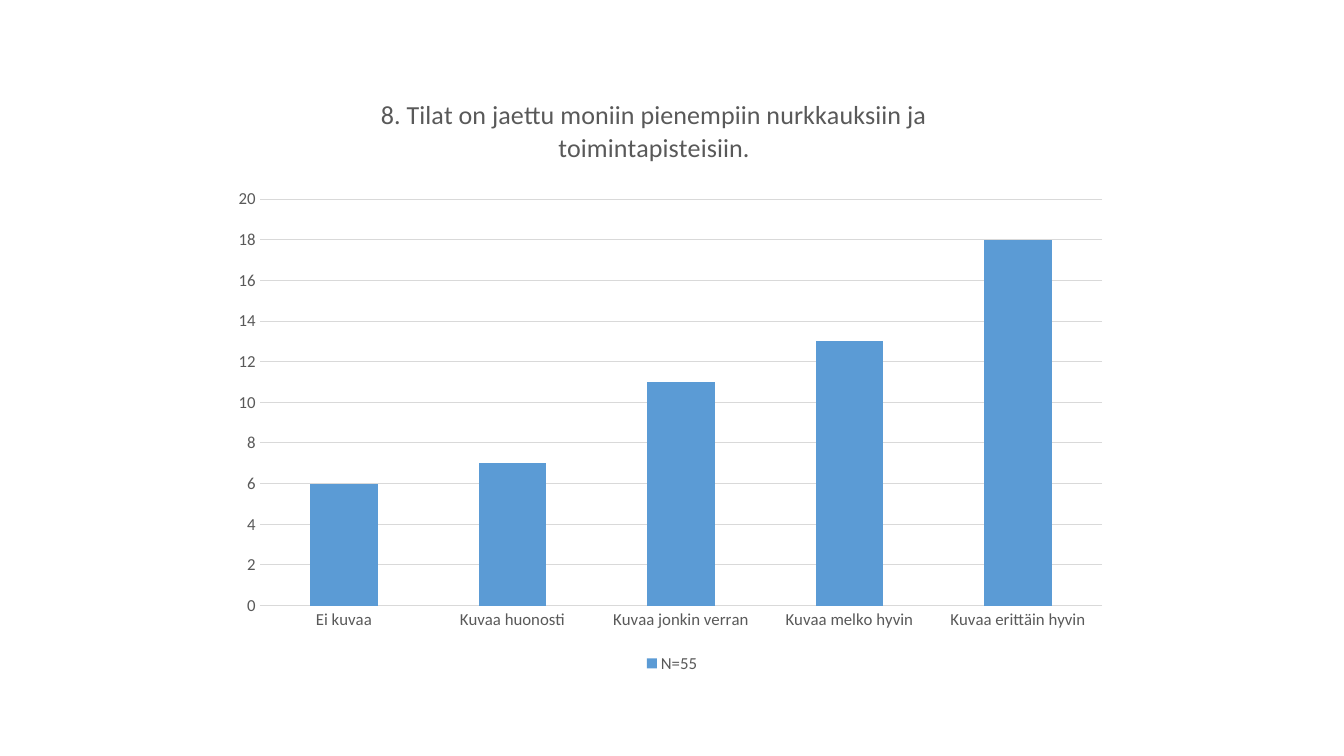
from dataclasses import dataclass

from lxml import etree
from pptx import Presentation
from pptx.chart.data import CategoryChartData
from pptx.dml.color import RGBColor
from pptx.enum.chart import XL_CHART_TYPE, XL_LEGEND_POSITION, XL_TICK_MARK
from pptx.oxml.ns import qn
from pptx.util import Inches, Pt

COLUMN_STACKED = XL_CHART_TYPE.COLUMN_STACKED
LEGEND_BOTTOM = XL_LEGEND_POSITION.BOTTOM
NO_TICK = XL_TICK_MARK.NONE


@dataclass(frozen=True)
class Theme:
    font: str = "Calibri"
    text: RGBColor = RGBColor(0x59, 0x59, 0x59)
    grid: RGBColor = RGBColor(0xD9, 0xD9, 0xD9)
    column: RGBColor = RGBColor(0x5B, 0x9B, 0xD5)
    title_size: Pt = Pt(18.6)
    label_size: Pt = Pt(12)
    line_width: Pt = Pt(0.75)


theme = Theme()


def style_font(font, size):
    font.name = theme.font
    font.size = size
    font.bold = False
    font.color.rgb = theme.text


def set_layout(element, position, **settings):
    """Place a chart part by fractions of the chart area."""
    for old_layout in element.findall(qn("c:layout")):
        element.remove(old_layout)
    layout = etree.Element(qn("c:layout"))
    manual = etree.SubElement(layout, qn("c:manualLayout"))
    for name, value in settings.items():
        etree.SubElement(manual, qn(f"c:{name}")).set("val", str(value))
    element.insert(position, layout)


# Slide
presentation = Presentation()
presentation.slide_width = Inches(13.33)
presentation.slide_height = Inches(7.5)
slide = presentation.slides.add_slide(presentation.slide_layouts[6])

# Survey answers
answers = CategoryChartData()
answers.categories = [
    "Ei kuvaa",
    "Kuvaa huonosti",
    "Kuvaa jonkin verran",
    "Kuvaa melko hyvin",
    "Kuvaa erittäin hyvin",
]
answers.add_series("N=55", (6, 7, 11, 13, 18))

# Column chart
chart = slide.shapes.add_chart(
    COLUMN_STACKED, Inches(2.22), Inches(0.79), Inches(8.89), Inches(5.93), answers
).chart
style_font(chart.font, theme.label_size)
plot = chart.plots[0]
plot.gap_width = 150
plot.overlap = 100
plot.vary_by_categories = False
column_fill = plot.series[0].format.fill
column_fill.solid()
column_fill.fore_color.rgb = theme.column
set_layout(
    chart.element.find(".//" + qn("c:plotArea")), 0,
    layoutTarget="inner", xMode="edge", yMode="edge", x=0.04, y=0.2, w=0.94, h=0.68,
)

# Title
chart.has_title = True
title = chart.chart_title
title.include_in_layout = False
title.text_frame.text = "8. Tilat on jaettu moniin pienempiin nurkkauksiin ja toimintapisteisiin."
style_font(title.text_frame.paragraphs[0].font, theme.title_size)
set_layout(title.element if hasattr(title, "element") else chart.element.find(".//" + qn("c:title")), 1,
           xMode="edge", yMode="edge", x=0.17, y=0.02)

# Axes
for axis in (chart.category_axis, chart.value_axis):
    axis.major_tick_mark = NO_TICK
    axis.minor_tick_mark = NO_TICK
    style_font(axis.tick_labels.font, theme.label_size)
chart.value_axis.minimum_scale = 0
chart.value_axis.maximum_scale = 20
chart.value_axis.major_unit = 2
chart.value_axis.format.line.fill.background()
for line in (chart.category_axis.format.line, chart.value_axis.major_gridlines.format.line):
    line.color.rgb = theme.grid
    line.width = theme.line_width

# Legend
chart.has_legend = True
chart.legend.position = LEGEND_BOTTOM
chart.legend.include_in_layout = False
style_font(chart.legend.font, theme.label_size)

presentation.save("out.pptx")
